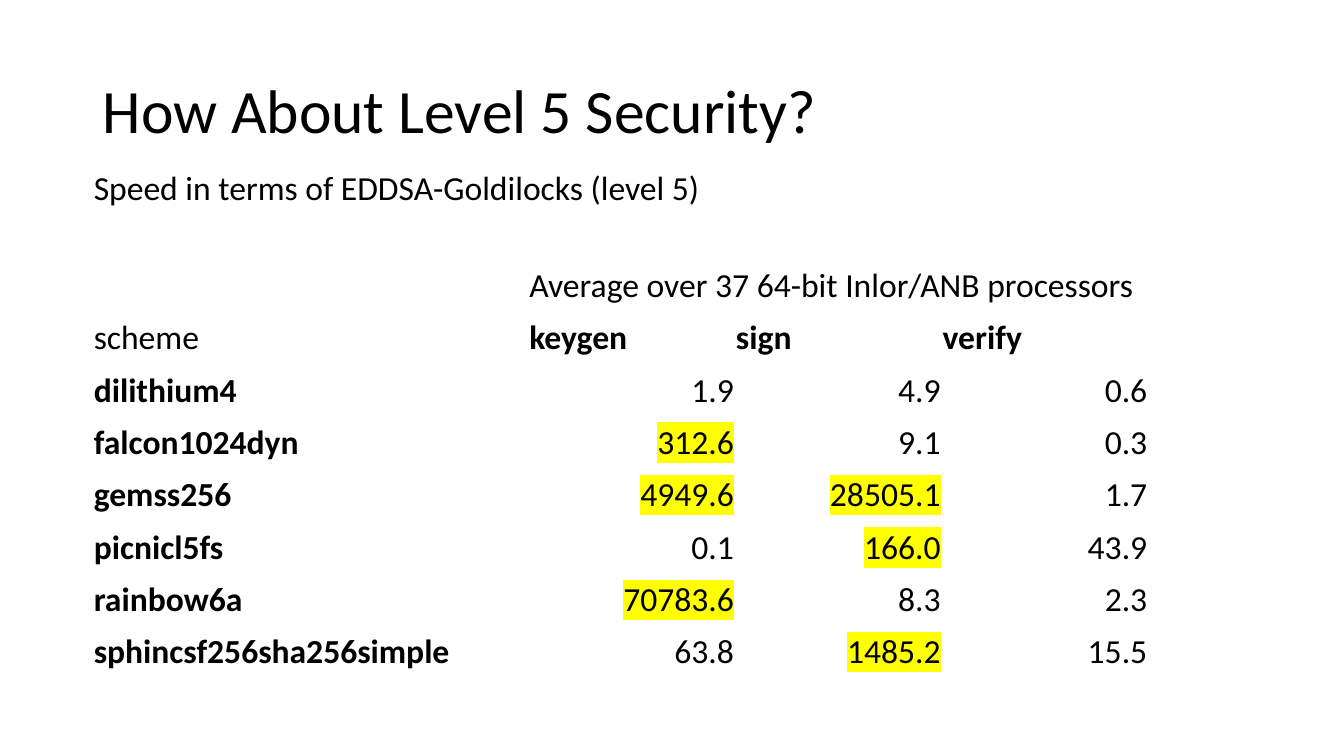
from pptx import Presentation
from pptx.dml.color import RGBColor
from pptx.enum import text
from pptx.oxml import parse_xml
from pptx.oxml.ns import nsdecls, qn
from pptx.util import Inches, Pt

TITLE = "How About Level 5 Security?"
SUBTITLE = "Speed in terms of EDDSA-Goldilocks (level 5)"
AVERAGE = "Average over 37 64-bit Inlor/ANB processors"
HEADERS = ["scheme", "keygen", "sign", "verify"]
SPEEDS = [
    ("dilithium4", 1.9, 4.9, 0.6),
    ("falcon1024dyn", 312.6, 9.1, 0.3),
    ("gemss256", 4949.6, 28505.1, 1.7),
    ("picnicl5fs", 0.1, 166.0, 43.9),
    ("rainbow6a", 70783.6, 8.3, 2.3),
    ("sphincsf256sha256simple", 63.8, 1485.2, 15.5),
]
SLOW = 100  # speeds from here up are highlighted
COL_WIDTHS = [4.32] + [2.05] * 3
ROW_HEIGHTS = [0.52, 0.96] + [0.52] * (1 + len(SPEEDS))
BLACK, YELLOW = "000000", "FFFF00"


def color(value):
    return RGBColor.from_string(value)


def write(tf, content, size=24, bold=False, right=False, highlight=None):
    p = tf.paragraphs[0]
    p.alignment = text.PP_ALIGN.RIGHT if right else text.PP_ALIGN.LEFT
    r = p.add_run()
    r.text = content
    r.font.size, r.font.bold, r.font.name = Pt(size), bold, "Calibri"
    r.font.color.rgb = color(BLACK)
    if highlight:
        mark = parse_xml(f'<a:highlight {nsdecls("a")}><a:srgbClr val="{highlight}"/></a:highlight>')
        r.font._element.find(qn("a:solidFill")).addnext(mark)
    return p


prs = Presentation()
prs.slide_width, prs.slide_height = Inches(13.33), Inches(7.5)
s = prs.slides.add_slide(prs.slide_layouts[6])

# Title
tf = s.shapes.add_textbox(Inches(0.92), Inches(0.4), Inches(11.5), Inches(1.45)).text_frame
tf.word_wrap = True
tf.vertical_anchor = text.MSO_ANCHOR.MIDDLE
write(tf, TITLE, size=44).line_spacing = 0.9

# Table grid
table = s.shapes.add_table(len(ROW_HEIGHTS), len(COL_WIDTHS), Inches(0.92), Inches(1.56),
                           Inches(sum(COL_WIDTHS)), Inches(sum(ROW_HEIGHTS))).table
table.first_row = table.horz_banding = False
for col, width in zip(table.columns, COL_WIDTHS):
    col.width = Inches(width)
for row, height in zip(table.rows, ROW_HEIGHTS):
    row.height = Inches(height)
for cell in table.iter_cells():
    cell.fill.background()
    cell.vertical_anchor = text.MSO_ANCHOR.BOTTOM
    cell.margin_left = cell.margin_right = cell.margin_top = Inches(0.01)
    cell.margin_bottom = 0

# Captions and headers
table.cell(0, 0).merge(table.cell(0, 2))
table.cell(1, 1).merge(table.cell(1, 3))
write(table.cell(0, 0).text_frame, SUBTITLE)
write(table.cell(1, 1).text_frame, AVERAGE)
for j, header in enumerate(HEADERS):
    write(table.cell(2, j).text_frame, header, bold=j > 0)

# Speeds
for i, (scheme, *speeds) in enumerate(SPEEDS, 3):
    write(table.cell(i, 0).text_frame, scheme, bold=True)
    for j, speed in enumerate(speeds, 1):
        write(table.cell(i, j).text_frame, f"{speed:.1f}", right=True,
              highlight=YELLOW if speed >= SLOW else None)

prs.save("out.pptx")
